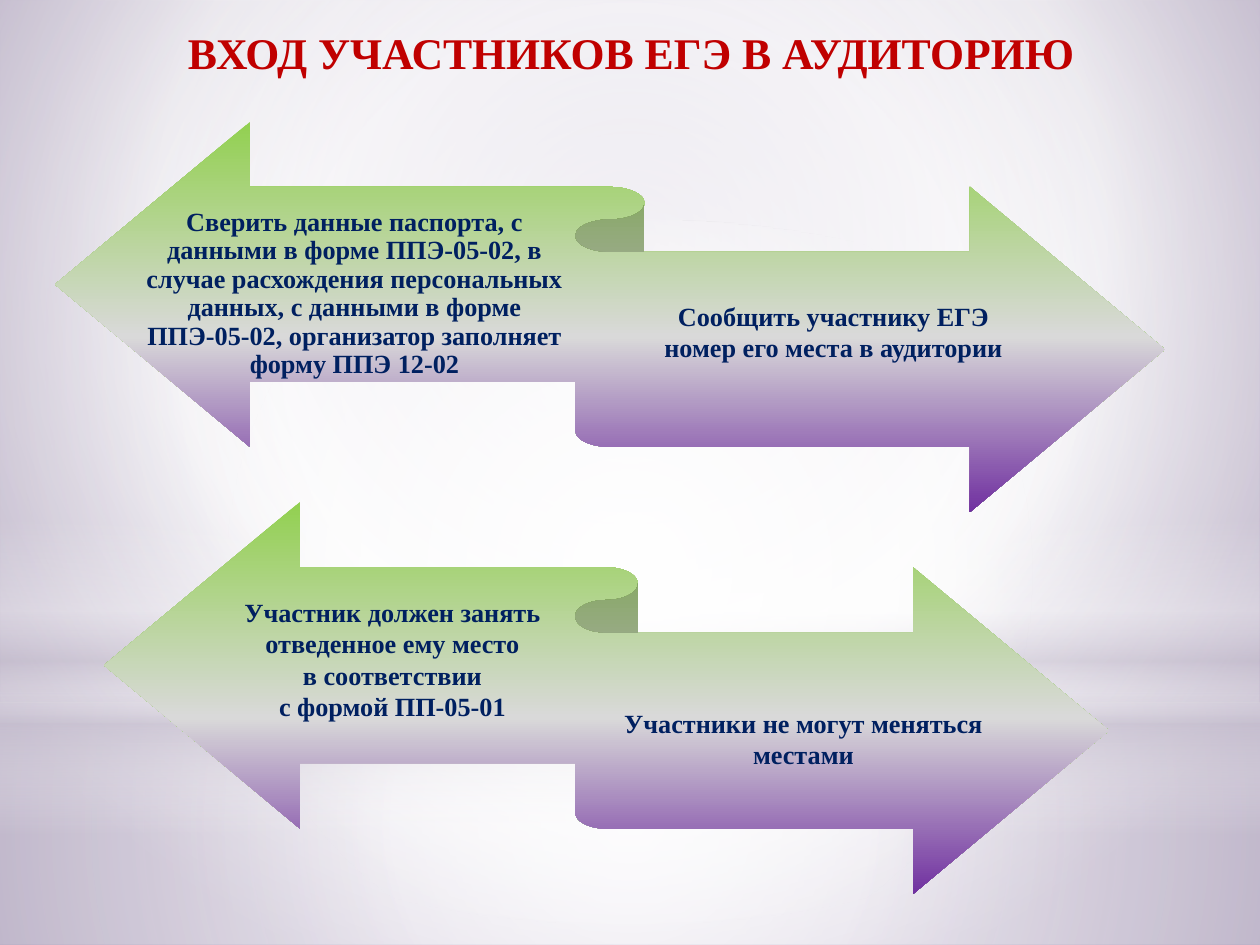
from lxml import etree
from pptx import Presentation
from pptx.dml.color import RGBColor
from pptx.enum import shapes, text
from pptx.oxml.ns import qn
from pptx.util import Emu, Pt

SCALE = 914400 / 126
WIDTH, HEIGHT = 1260, 945
NAVY, RED = "002060", "C00000"
CENTRE = (50, 50, 50, 50)


def px(length):
    return Emu(round(length * SCALE))


def color(value):
    return RGBColor.from_string(value)


def paint_gradient(fill, parent, stops, angle=90, focus=None):
    """Stops are (position %, colour[, opacity %]); a focus makes it radial."""
    fill.solid()
    gradient = etree.Element(qn("a:gradFill"), rotWithShape="1")
    stop_list = etree.SubElement(gradient, qn("a:gsLst"))
    for position, value, *opacity in stops:
        stop = etree.SubElement(stop_list, qn("a:gs"), pos=str(position * 1000))
        shade = etree.SubElement(stop, qn("a:srgbClr"), val=value)
        if opacity:
            etree.SubElement(shade, qn("a:alpha"), val=str(opacity[0] * 1000))
    if focus:
        radial = etree.SubElement(gradient, qn("a:path"), path="circle")
        sides = {side: str(part * 1000) for side, part in zip("ltrb", focus)}
        etree.SubElement(radial, qn("a:fillToRect"), **sides)
    else:
        etree.SubElement(gradient, qn("a:lin"), ang=str(angle * 60000), scaled="0")
    parent.replace(parent.find(qn("a:solidFill")), gradient)


class Canvas:
    font = "Times New Roman"

    def __init__(self, page):
        self.page = page

    def background(self, stops, focus):
        fill = self.page.background.fill
        fill.solid()
        parent = self.page.element.find(".//" + qn("p:bgPr"))
        paint_gradient(fill, parent, stops, focus=focus)

    def shape(self, kind, frame, stops, focus=None):
        shape = self.page.shapes.add_shape(kind, *map(px, frame))
        shape.shadow.inherit = False
        paint_gradient(shape.fill, shape.element.spPr, stops, focus=focus)
        shape.line.fill.background()

    def text(self, frame, lines, size=15, ink=NAVY, spacing=None,
             side_inset=13, anchor=text.MSO_ANCHOR.TOP):
        box = self.page.shapes.add_textbox(*map(px, frame))
        body = box.text_frame
        body.word_wrap = True
        body.vertical_anchor = anchor
        body.margin_left = body.margin_right = px(side_inset)
        body.text = "\n".join(lines)
        for para in body.paragraphs:
            para.alignment = text.PP_ALIGN.CENTER
            para.line_spacing = spacing
            para.font.name = self.font
            para.font.size = Pt(size)
            para.font.bold = True
            para.font.color.rgb = color(ink)


def main():
    deck = Presentation()
    deck.slide_width, deck.slide_height = px(WIDTH), px(HEIGHT)
    canvas = Canvas(deck.slides.add_slide(deck.slide_layouts[6]))
    kinds = shapes.MSO_SHAPE

    # Backdrop: radial glow with a soft horizon
    canvas.background([(0, "C1B7CD"), (60, "FFFFFF"), (100, "A191B5")],
                      (20, 10, 20, 60))
    canvas.shape(kinds.RECTANGLE, (0, 703, WIDTH, 242),
                 [(0, "FFFFFF", 91), (37, "FFFFFF", 76), (100, "C9C2D1", 79)], CENTRE)
    canvas.shape(kinds.RECTANGLE, (0, 0, WIDTH, 703),
                 [(0, "FFFFFF", 89), (48, "FFFFFF", 62), (100, "C9C2D1", 79)], CENTRE)
    canvas.shape(kinds.RECTANGLE, (0, 519, WIDTH, 315),
                 [(0, "FFFFFF", 0), (29, "FFFFFF", 30), (45, "C9C2D1", 40),
                  (55, "FFFFFF", 26), (65, "C9C2D1", 60), (100, "FFFFFF", 0)])
    canvas.shape(kinds.OVAL, (0, 220, WIDTH, 703),
                 [(0, "FFFFFF", 100), (56, "FFFFFF", 0)], CENTRE)

    # Title
    canvas.text((105, 20, 1052, 86), ["ВХОД УЧАСТНИКОВ ЕГЭ В АУДИТОРИЮ"],
                size=25, ink=RED)

    # Ribbons
    for frame in ((55, 122, 1110, 390), (104, 502, 1005, 392)):
        canvas.shape(kinds.LEFT_RIGHT_RIBBON, frame,
                     [(0, "92D050"), (55, "D9D9D9"), (100, "7030A0")])

    # Steps on the ribbons
    canvas.text((143, 195, 423, 198),
                ["Сверить данные паспорта, с данными в форме ППЭ-05-02, "
                 "в случае расхождения персональных данных, с данными "
                 "в форме ППЭ-05-02, организатор заполняет форму ППЭ 12-02"],
                spacing=0.9, side_inset=0, anchor=text.MSO_ANCHOR.MIDDLE)
    canvas.text((630, 294, 407, 77),
                ["Сообщить участнику ЕГЭ номер его места в аудитории"])
    canvas.text((204, 590, 377, 140),
                ["Участник должен занять отведенное ему место",
                 "в соответствии", "с формой ПП-05-01"])
    canvas.text((600, 701, 407, 77), ["Участники не могут меняться местами"])

    deck.save("out.pptx")


if __name__ == "__main__":
    main()
